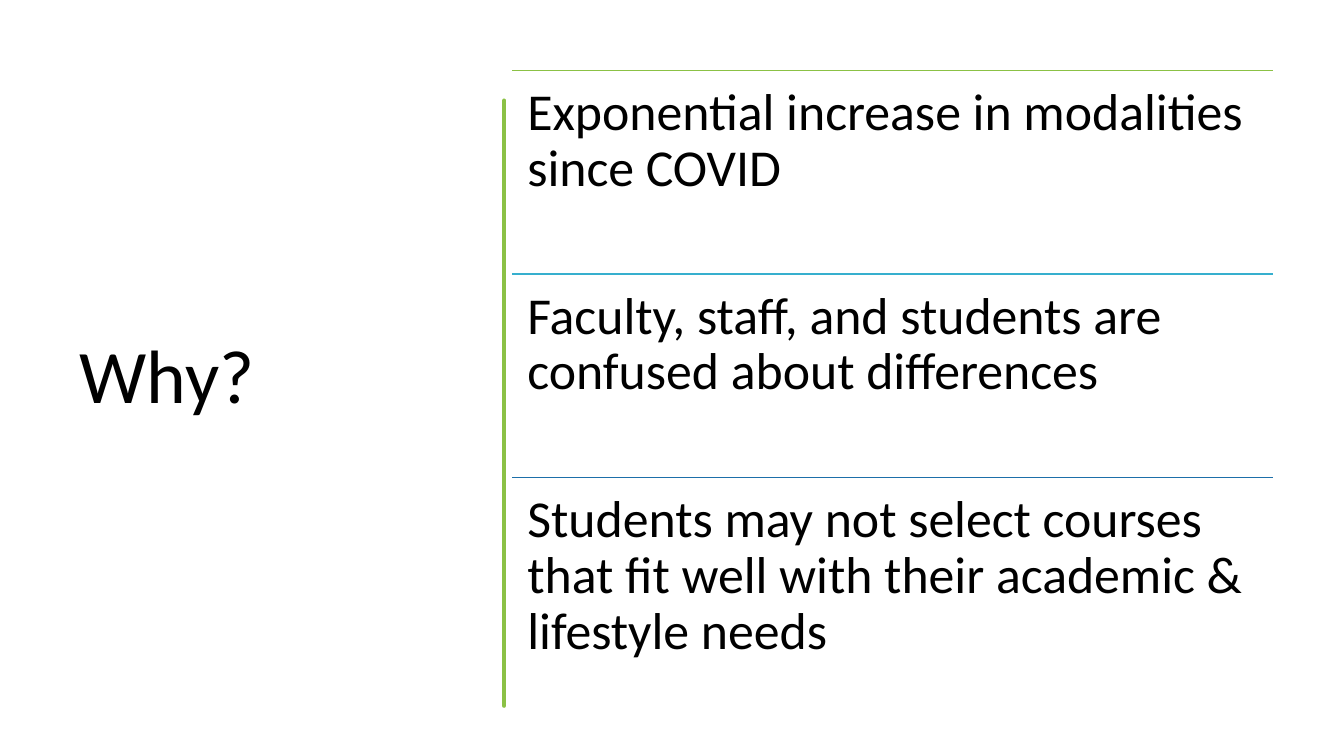
import lxml.etree
import pptx
import pptx.dml.color
import pptx.enum.shapes
import pptx.enum.text
import pptx.oxml.ns
import pptx.util
from pptx.util import Inches

COLORS = {"text": "000000", "green": "8BC145", "cyan": "36AFCE", "blue": "1D6FA9"}
REASONS = [
    ("Exponential increase in modalities since COVID", "green"),
    ("Faculty, staff, and students are confused about differences", "cyan"),
    ("Students may not select courses that fit well with their academic & lifestyle needs", "blue"),
]
BRUSH_RIGHT = [
    (4.75, 0.84), (4.76, 1.15), (4.75, 1.5), (4.75, 2.26), (4.75, 2.94), (4.76, 3.3),
    (4.75, 3.6), (4.76, 4), (4.76, 4.3), (4.74, 4.6), (4.75, 5.1), (4.76, 5.5),
    (4.75, 5.84), (4.75, 6.76),
]
BRUSH_LEFT = [
    (4.73, 6.76), (4.72, 6.4), (4.73, 6.13), (4.73, 5.7), (4.72, 5.2), (4.73, 4.77),
    (4.72, 4.4), (4.73, 4.1), (4.72, 3.6), (4.73, 3.2), (4.73, 2.5), (4.73, 2.1),
    (4.72, 1.7), (4.74, 1.3), (4.73, 0.84),
]


class SlideBuilder:
    font_name = "Calibri"
    line_spacing = 0.9

    def __init__(self, presentation):
        self.slide = presentation.slides.add_slide(presentation.slide_layouts[5])

    def color(self, name):
        return pptx.dml.color.RGBColor.from_string(COLORS[name])

    def set_text(self, text_frame, text, size):
        text_frame.word_wrap = True
        text_frame.auto_size = pptx.enum.text.MSO_AUTO_SIZE.NONE
        text_frame.text = text
        paragraph = text_frame.paragraphs[0]
        paragraph.alignment = pptx.enum.text.PP_ALIGN.LEFT
        paragraph.line_spacing = self.line_spacing
        paragraph.font.name = self.font_name
        paragraph.font.size = pptx.util.Pt(size)
        paragraph.font.color.rgb = self.color("text")

    def title(self, text, left, top, width, height):
        shape = self.slide.shapes.title
        shape.left, shape.top = Inches(left), Inches(top)
        shape.width, shape.height = Inches(width), Inches(height)
        self.set_text(shape.text_frame, text, 54)
        shape.text_frame.vertical_anchor = pptx.enum.text.MSO_ANCHOR.MIDDLE

    def brush_stroke(self, points, color):
        builder = self.slide.shapes.build_freeform(*points[0], scale=Inches(1))
        builder.add_line_segments(points[1:], close=True)
        shape = builder.convert_to_shape()
        shape.shadow.inherit = False
        shape.fill.solid()
        shape.fill.fore_color.rgb = self.color(color)
        shape.line.color.rgb = self.color(color)
        shape.line.width = pptx.util.Pt(3.25)

    def rule(self, left, top, width, color):
        connector = self.slide.shapes.add_connector(
            pptx.enum.shapes.MSO_CONNECTOR.STRAIGHT,
            Inches(left), Inches(top), Inches(left + width), Inches(top))
        connector.line.color.rgb = self.color(color)
        connector.line.width = pptx.util.Pt(1)
        lxml.etree.SubElement(connector._element.spPr, pptx.oxml.ns.qn("a:effectLst"))

    def text_box(self, text, left, top, width, height):
        shape = self.slide.shapes.add_textbox(
            Inches(left), Inches(top), Inches(width), Inches(height))
        text_frame = shape.text_frame
        text_frame.margin_left = text_frame.margin_right = Inches(0.15)
        text_frame.margin_top = text_frame.margin_bottom = Inches(0.15)
        self.set_text(text_frame, text, 37)


def main():
    presentation = pptx.Presentation()
    presentation.slide_width = Inches(13.33)
    presentation.slide_height = Inches(7.5)
    builder = SlideBuilder(presentation)
    builder.title("Why?", 0.69, 0.7, 3.74, 6.11)
    builder.brush_stroke(BRUSH_RIGHT + BRUSH_LEFT, "green")
    left, first_top, width, row_height = 5.08, 0.7, 7.55, 2.02
    for index, (reason, color) in enumerate(REASONS):
        top = first_top + index * row_height
        builder.rule(left, top, width, color)
        builder.text_box(reason, left, top, width, row_height)
    presentation.save("out.pptx")


if __name__ == "__main__":
    main()
